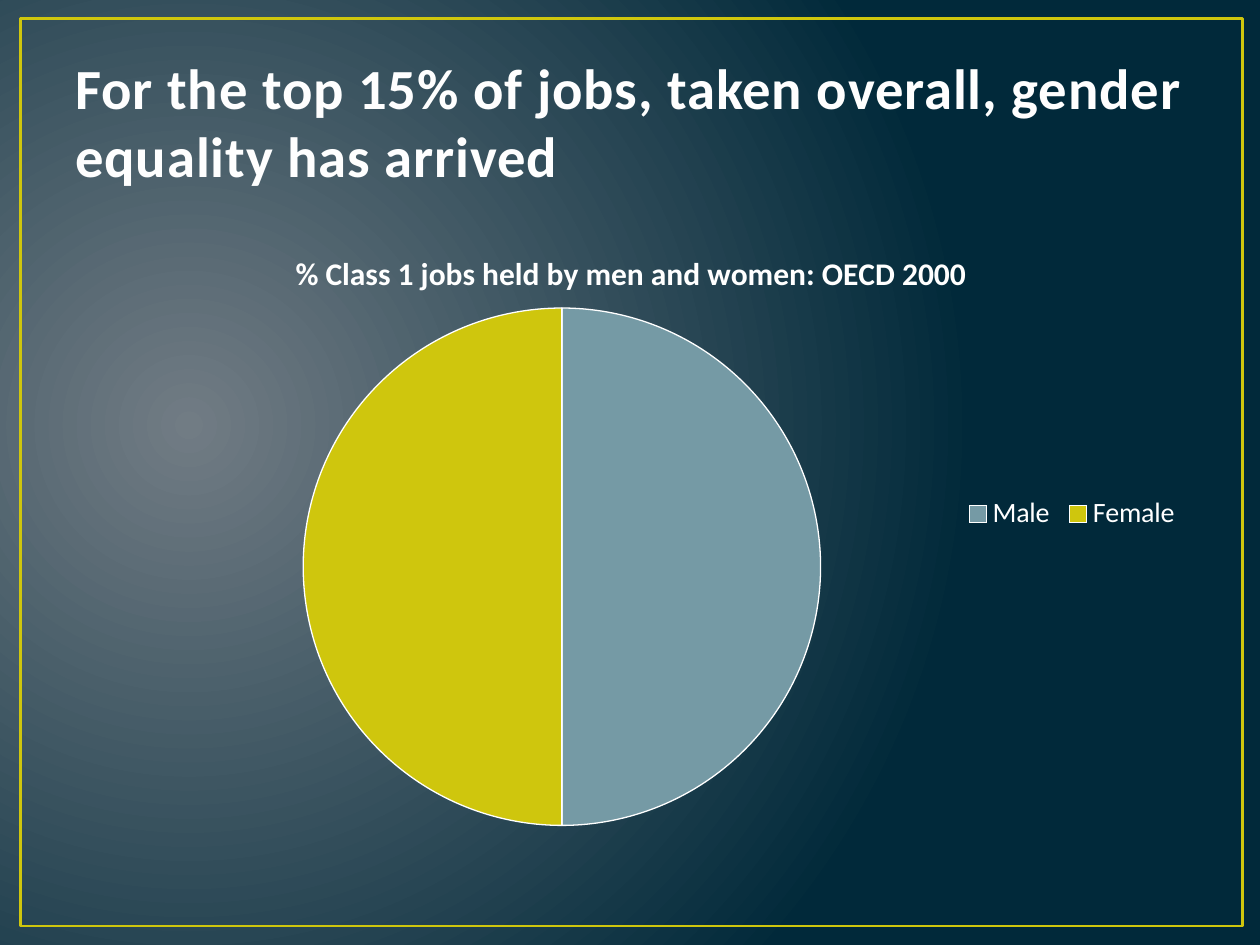
from dataclasses import dataclass

from lxml import etree
from pptx import Presentation
from pptx.chart.data import CategoryChartData
from pptx.dml.color import RGBColor
from pptx.enum.chart import XL_CHART_TYPE, XL_LEGEND_POSITION
from pptx.enum.shapes import MSO_SHAPE
from pptx.enum.text import MSO_ANCHOR
from pptx.oxml.ns import qn
from pptx.util import Cm, Pt

PIE = XL_CHART_TYPE.PIE
LEGEND_RIGHT = XL_LEGEND_POSITION.RIGHT
RECTANGLE = MSO_SHAPE.RECTANGLE
BOTTOM = MSO_ANCHOR.BOTTOM


@dataclass(frozen=True)
class Theme:
    font: str = "Calibri"
    glow: RGBColor = RGBColor(0x71, 0x7C, 0x84)
    navy: RGBColor = RGBColor(0x01, 0x29, 0x3A)
    lime: RGBColor = RGBColor(0xCF, 0xC6, 0x0D)
    steel: RGBColor = RGBColor(0x75, 0x9A, 0xA5)
    heading: RGBColor = RGBColor(0xFE, 0xFE, 0xFE)
    outline: RGBColor = RGBColor(0x38, 0x4F, 0x55)
    white: RGBColor = RGBColor(0xFF, 0xFF, 0xFF)
    heading_size: Pt = Pt(32.4)
    chart_size: Pt = Pt(10)
    chart_title_size: Pt = Pt(18)
    legend_size: Pt = Pt(16)


THEME = Theme()


def style_font(font, size, color, bold=False):
    font.name = THEME.font
    font.size = size
    font.bold = bold
    font.color.rgb = color


def paint_background(slide):
    """Fill the slide with a circular glow centred left of the middle."""
    fill = slide.background.fill
    fill.gradient()
    for stop, color, position in zip(fill.gradient_stops, (THEME.glow, THEME.navy), (0, 1)):
        stop.color.rgb = color
        stop.position = position
    gradient = next(slide.element.iter(qn("a:gradFill")))
    gradient.remove(gradient.find(qn("a:lin")))
    circle = etree.SubElement(gradient, qn("a:path"), path="circle")
    etree.SubElement(circle, qn("a:fillToRect"), l="15000", t="50000", r="85000", b="60000")


def add_frame(slide, left, top, width, height):
    frame = slide.shapes.add_shape(RECTANGLE, left, top, width, height)
    frame.shadow.inherit = False
    frame.fill.background()
    frame.line.color.rgb = THEME.lime
    frame.line.width = Pt(1.5)


def add_heading(slide, text, left, top, width, height):
    text_frame = slide.shapes.add_textbox(left, top, width, height).text_frame
    text_frame.word_wrap = True
    text_frame.vertical_anchor = BOTTOM
    run = text_frame.paragraphs[0].add_run()
    run.text = text
    style_font(run.font, THEME.heading_size, THEME.heading, bold=True)
    properties = run.font._element if hasattr(run.font, "_element") else run._r.get_or_add_rPr()
    properties.set("spc", "50")
    outline = etree.Element(qn("a:ln"), w=str(Pt(1.05)))
    solid = etree.SubElement(outline, qn("a:solidFill"))
    etree.SubElement(solid, qn("a:srgbClr"), val=str(THEME.outline))
    properties.insert(0, outline)


def place(chart_part, **fractions):
    """Set a manual layout in fractions of the chart area."""
    layout = chart_part.find(qn("c:layout"))
    if layout is None:
        layout = etree.Element(qn("c:layout"))
        before = chart_part.find(qn("c:tx"))
        if before is None:
            before = chart_part.find(qn("c:legendPos"))
        if before is None:
            chart_part.insert(0, layout)
        else:
            before.addnext(layout)
    for child in list(layout):
        layout.remove(child)
    manual = etree.SubElement(layout, qn("c:manualLayout"))
    if chart_part.tag == qn("c:plotArea"):
        etree.SubElement(manual, qn("c:layoutTarget"), val="inner")
    for mode in ("xMode", "yMode"):
        etree.SubElement(manual, qn(f"c:{mode}"), val="edge")
    for name, value in fractions.items():
        etree.SubElement(manual, qn(f"c:{name}"), val=str(value))


def add_pie(slide, title, shares, colors, left, top, width, height):
    data = CategoryChartData()
    data.categories = list(shares)
    data.add_series("Series 1", list(shares.values()))
    chart = slide.shapes.add_chart(PIE, left, top, width, height, data).chart
    style_font(chart.font, THEME.chart_size, THEME.white)

    title_run = chart.chart_title.text_frame.paragraphs[0].add_run()
    title_run.text = title
    style_font(title_run.font, THEME.chart_title_size, THEME.white, bold=True)

    chart.has_legend = True
    chart.legend.position = LEGEND_RIGHT
    chart.legend.include_in_layout = False
    style_font(chart.legend.font, THEME.legend_size, THEME.white)

    plot = chart.plots[0]
    plot.vary_by_categories = True
    for index, color in enumerate(colors):
        slice_format = plot.series[0].points[index].format
        slice_format.fill.solid()
        slice_format.fill.fore_color.rgb = color
        slice_format.line.color.rgb = THEME.white
        slice_format.line.width = Pt(0.75)

    body = chart.element.find(qn("c:chart"))
    place(body.find(qn("c:title")), x=0.2, y=0.04)
    place(body.find(qn("c:plotArea")), x=0.21, y=0.14, w=0.46, h=0.83)
    place(body.find(qn("c:legend")), x=0.79, y=0.43, w=0.2, h=0.08)


def main():
    deck = Presentation()
    deck.slide_width, deck.slide_height = Cm(25.4), Cm(19.05)
    slide = deck.slides.add_slide(deck.slide_layouts[6])
    margin, content_width = Cm(1.27), Cm(22.86)

    paint_background(slide)
    add_frame(slide, Cm(0.41), Cm(0.38), Cm(24.64), Cm(18.29))
    add_heading(
        slide,
        "For the top 15% of jobs, taken overall, gender equality has arrived",
        margin, Cm(0.76), content_width, Cm(3.18),
    )
    add_pie(
        slide,
        "% Class 1 jobs held by men and women: OECD 2000",
        {"Male": 50, "Female": 50},
        (THEME.steel, THEME.lime),
        margin, Cm(4.45), content_width, Cm(12.57),
    )
    deck.save("out.pptx")


if __name__ == "__main__":
    main()
